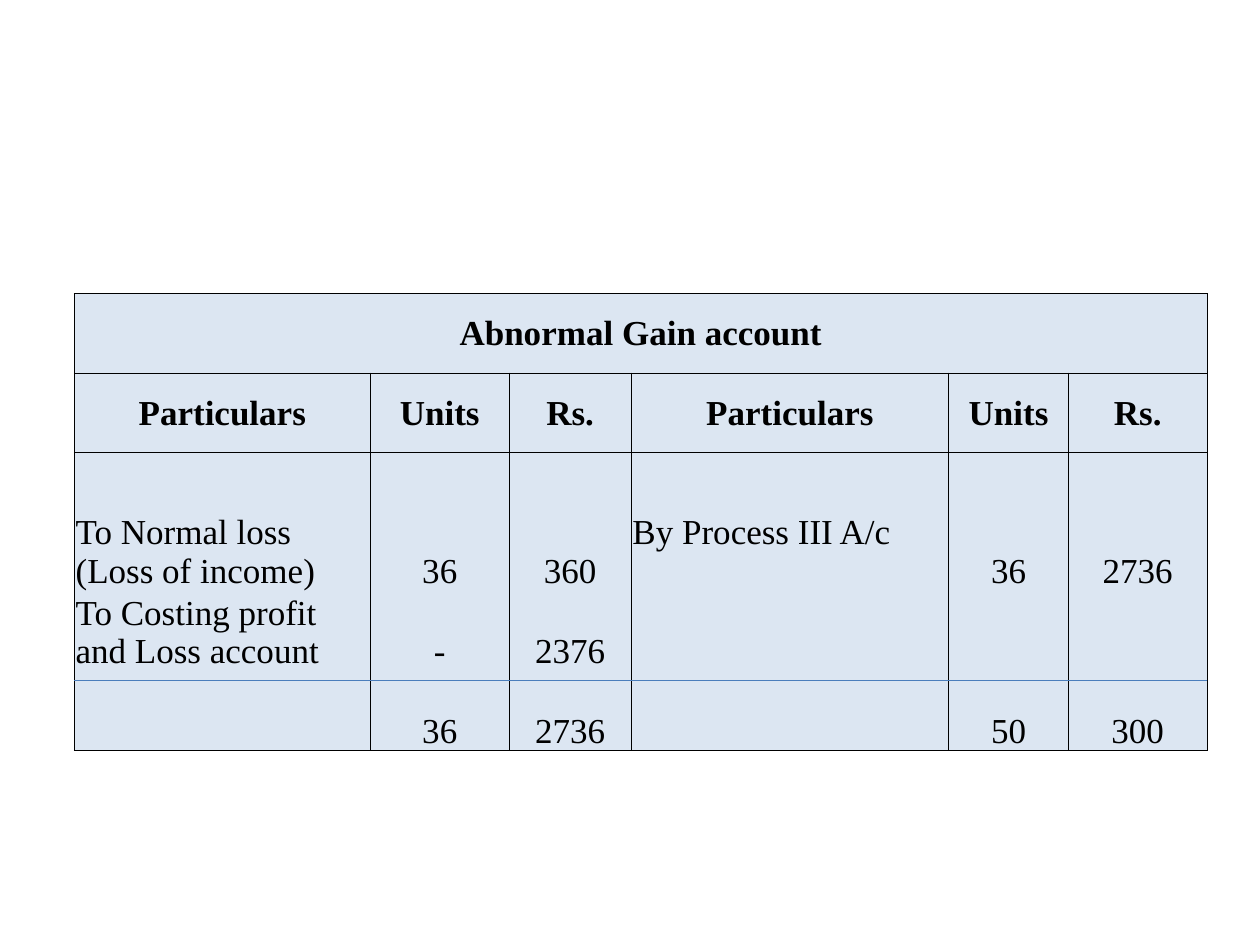
from lxml.etree import SubElement
from pptx import Presentation
from pptx.dml.color import RGBColor
from pptx.enum.shapes import MSO_CONNECTOR as Link
from pptx.enum.text import MSO_ANCHOR as Anchor, PP_ALIGN as Align
from pptx.oxml import parse_xml
from pptx.oxml.ns import nsdecls, qn
from pptx.util import Inches, Pt

LEFT, TOP = 0.59, 2.33
COLS = [2.35, 1.1, 0.97, 2.52, 0.95, 1.1]
ROWS = [0.63, 0.63, 1.1, 0.64, 0.63]
HEAD = 2
DATA = [
    ["Abnormal Gain account"],
    ["Particulars", "Units", "Rs."] * 2,
    ["To Normal loss\n(Loss of income)", "36", "360",
     "By Process III A/c", "36", "2736"],
    ["To Costing profit and Loss account", "-", "2376", "", "", ""],
    ["", "36", "2736", "", "50", "300"],
]
# Sides ruled in each row: the body is open between its rows
RULES = ["LRTB", "LRTB", "LRT", "LR", "LRB"]


def tint(code):
    return RGBColor.from_string(code)


class Page:
    font, size = "Times New Roman", 20
    ink, fill, blue = "000000", "DCE6F2", "4B7EBC"

    def __init__(self, slide):
        self.slide = slide

    def rule(self, cell, sides):
        """Draw the named sides of a cell and clear the others."""
        props = cell._tc.get_or_add_tcPr()
        for spot, side in enumerate("LRTB"):
            paint = (f'<a:solidFill><a:srgbClr val="{self.ink}"/></a:solidFill>'
                     if side in sides else "<a:noFill/>")
            props.insert(spot, parse_xml(
                f'<a:ln{side} {nsdecls("a")} w="{Pt(0.5)}">{paint}</a:ln{side}>'))

    def text(self, cell, words, bold, align):
        frame = cell.text_frame
        for n, line in enumerate(words.split("\n")):
            para = frame.add_paragraph() if n else frame.paragraphs[0]
            para.alignment = align
            run = para.add_run()
            run.text = line
            run.font.name, run.font.size = self.font, Pt(self.size)
            run.font.bold = bold
            run.font.color.rgb = tint(self.ink)

    def table(self, left, top, cols, rows, data, rules):
        box = [Inches(n) for n in (left, top, sum(cols), sum(rows))]
        grid = self.slide.shapes.add_table(len(rows), len(cols), *box).table
        grid.first_row = grid.horz_banding = False
        for col, wide in zip(grid.columns, cols):
            col.width = Inches(wide)
        for r, (row, high) in enumerate(zip(grid.rows, rows)):
            row.height = Inches(high)
            head = r < HEAD
            for c, cell in enumerate(row.cells):
                cell.fill.solid()
                cell.fill.fore_color.rgb = tint(self.fill)
                self.rule(cell, rules[r])
                cell.margin_left = cell.margin_right = Inches(0.01)
                cell.margin_top, cell.margin_bottom = Inches(0.01), 0
                cell.vertical_anchor = Anchor.MIDDLE if head else Anchor.BOTTOM
                words = data[r][c] if c < len(data[r]) else ""
                if words:
                    side = Align.LEFT if not head and c % 3 == 0 else Align.CENTER
                    self.text(cell, words, head, side)
        return grid

    def line(self, x1, y1, x2, y2):
        ends = [Inches(n) for n in (x1, y1, x2, y2)]
        link = self.slide.shapes.add_connector(Link.STRAIGHT, *ends)
        link.line.color.rgb = tint(self.blue)
        link.line.width = Pt(0.75)
        SubElement(link._element.spPr, qn("a:effectLst"))


def main():
    deck = Presentation()
    deck.slide_width, deck.slide_height = Inches(10), Inches(7.5)
    page = Page(deck.slides.add_slide(deck.slide_layouts[6]))
    grid = page.table(LEFT, TOP, COLS, ROWS, DATA, RULES)
    grid.cell(0, 0).merge(grid.cell(0, len(COLS) - 1))
    # Level with the first line of the entry across from it
    grid.cell(2, 3).margin_bottom = Inches(0.31)
    page.line(LEFT, 5.4, LEFT + sum(COLS), 5.4)
    deck.save("out.pptx")


if __name__ == "__main__":
    main()
